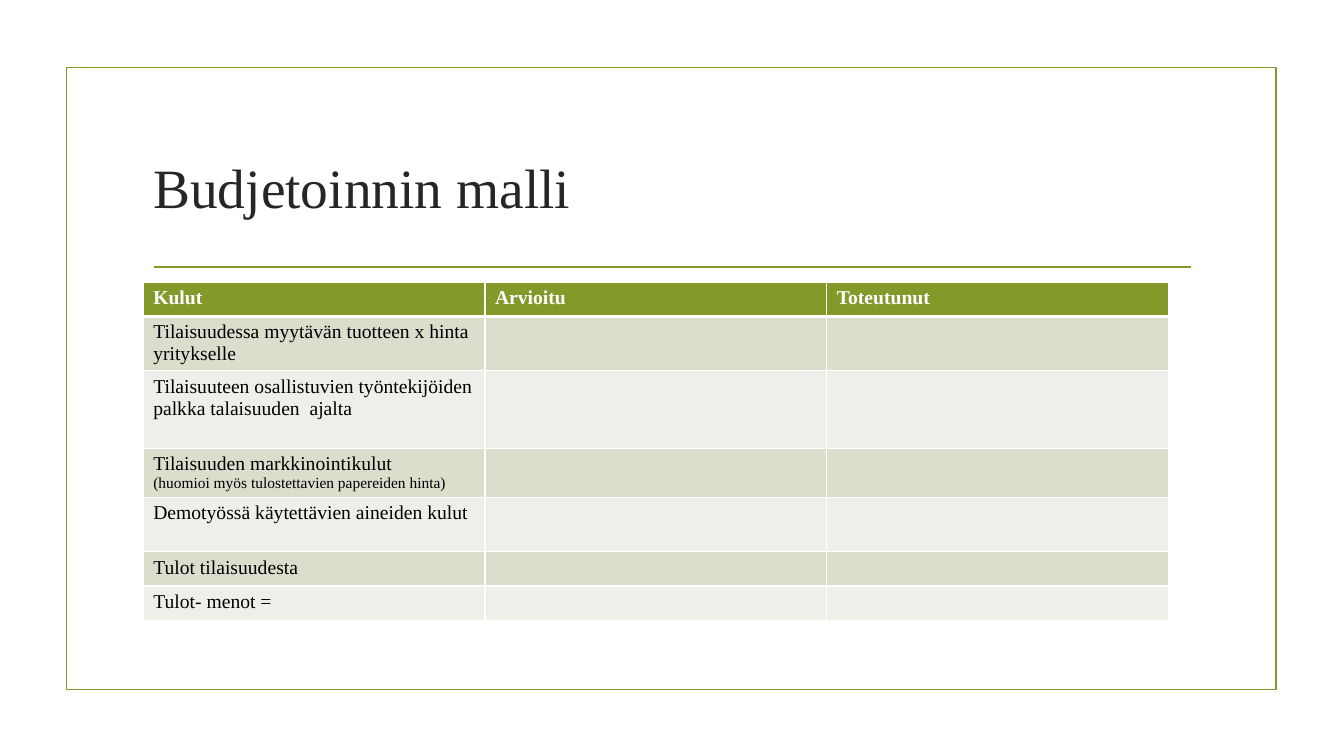
from lxml.etree import SubElement
from pptx import Presentation
from pptx.dml.color import RGBColor
from pptx.enum.shapes import MSO_CONNECTOR, MSO_SHAPE
from pptx.enum.text import MSO_ANCHOR, PP_ALIGN
from pptx.oxml.ns import qn
from pptx.util import Inches, Pt

FONT = "Times New Roman"
COLORS = {
    "green": "83992A",
    "title": "262626",
    "text": "000000",
    "white": "FFFFFF",
    "dark_band": "D9DECD",
    "light_band": "EDEFE8",
}
HEADERS = ["Kulut", "Arvioitu", "Toteutunut"]
BUDGET_ROWS = [
    (["Tilaisuudessa myytävän tuotteen x hinta yritykselle"], 0.54),
    (["Tilaisuuteen osallistuvien työntekijöiden palkka talaisuuden  ajalta"], 0.77),
    (["Tilaisuuden markkinointikulut",
      "(huomioi myös tulostettavien papereiden hinta)"], 0.48),
    (["Demotyössä käytettävien aineiden kulut"], 0.54),
    (["Tulot tilaisuudesta"], 0.34),
    (["Tulot- menot ="], 0.34),
]
HEADER_HEIGHT = 0.34


def color(name):
    return RGBColor.from_string(COLORS[name])


def style_font(font, size, color_name, bold=False):
    font.name = FONT
    font.size = Pt(size)
    font.bold = bold
    font.color.rgb = color(color_name)


def style_line(line):
    line.color.rgb = color("green")
    line.width = Pt(1.25)


def add_frame(slide, left, top, width, height):
    frame = slide.shapes.add_shape(
        MSO_SHAPE.RECTANGLE, *map(Inches, (left, top, width, height)))
    frame.shadow.inherit = False
    frame.fill.background()
    style_line(frame.line)


def add_divider(slide, left, top, width):
    divider = slide.shapes.add_connector(
        MSO_CONNECTOR.STRAIGHT, *map(Inches, (left, top, left + width, top)))
    style_line(divider.line)
    SubElement(divider._element.spPr, qn("a:effectLst"))


def place_title(slide, text, left, top, width, height):
    title = slide.shapes.title
    title.left, title.top, title.width, title.height = map(
        Inches, (left, top, width, height))
    frame = title.text_frame
    frame.text = text
    frame.word_wrap = True
    frame.vertical_anchor = MSO_ANCHOR.MIDDLE
    frame.margin_top = Inches(0.17)
    paragraph = frame.paragraphs[0]
    paragraph.alignment = PP_ALIGN.LEFT
    style_font(paragraph.font, 39.6, "title")


def add_borders(cell, top, bottom):
    properties = cell._tc.get_or_add_tcPr()
    for side, width in (("L", 1), ("R", 1), ("T", top), ("B", bottom)):
        line = SubElement(properties, qn(f"a:ln{side}"), w=str(Pt(width)))
        fill = SubElement(line, qn("a:solidFill"))
        SubElement(fill, qn("a:srgbClr"), val=COLORS["white"])


def fill_cell(cell, lines, row):
    header = row == 0
    band = "green" if header else "dark_band" if row % 2 else "light_band"
    add_borders(cell, 3 if row == 1 else 1, 3 if header else 1)
    cell.fill.solid()
    cell.fill.fore_color.rgb = color(band)
    cell.text = "\n".join(lines)
    for index, paragraph in enumerate(cell.text_frame.paragraphs):
        style_font(paragraph.font, 11 if index else 14,
                   "white" if header else "text", header)


def add_budget_table(slide, left, top, width):
    heights = [HEADER_HEIGHT] + [height for _, height in BUDGET_ROWS]
    contents = [[[header] for header in HEADERS]]
    contents += [[lines, [], []] for lines, _ in BUDGET_ROWS]
    table = slide.shapes.add_table(
        len(heights), len(HEADERS),
        *map(Inches, (left, top, width, sum(heights)))).table
    for column in table.columns:
        column.width = Inches(width / len(HEADERS))
    for row, (height, cells) in enumerate(zip(heights, contents)):
        table.rows[row].height = Inches(height)
        for column, lines in enumerate(cells):
            fill_cell(table.cell(row, column), lines, row)


def main():
    presentation = Presentation()
    presentation.slide_width = Inches(13.33)
    presentation.slide_height = Inches(7.5)
    slide = presentation.slides.add_slide(presentation.slide_layouts[5])
    add_frame(slide, 0.66, 0.67, 12, 6.17)
    add_divider(slide, 1.53, 2.65, 10.28)
    place_title(slide, "Budjetoinnin malli", 1.42, 1.07, 10.5, 1.43)
    add_budget_table(slide, 1.42, 2.8, 10.17)
    presentation.save("out.pptx")


if __name__ == "__main__":
    main()
